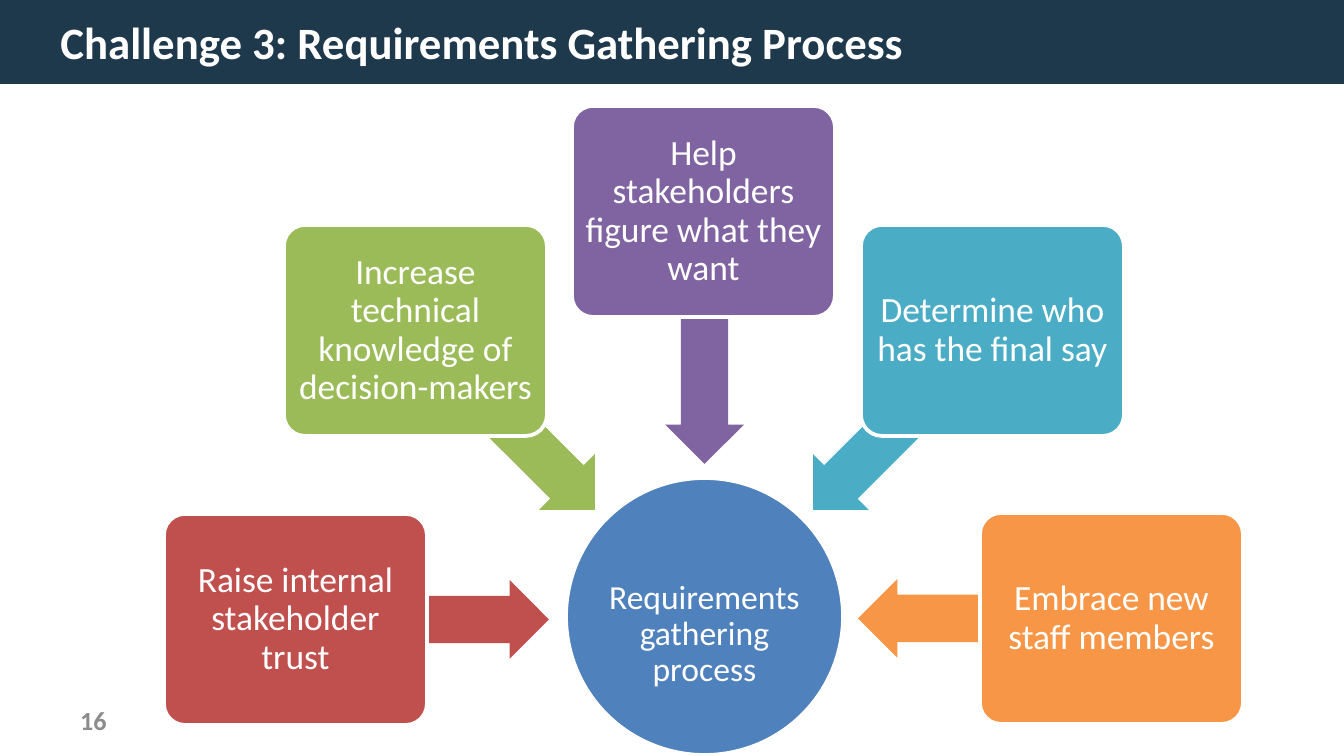
from dataclasses import dataclass
from math import cos, radians, sin

from pptx import Presentation
from pptx.dml.color import RGBColor
from pptx.enum.shapes import MSO_SHAPE as Preset
from pptx.enum.text import MSO_ANCHOR as Anchor, PP_ALIGN as Align
from pptx.util import Emu, Pt

EMU_PER_PX = 914400 / 134.4
SLIDE_WIDTH, SLIDE_HEIGHT = 1344, 756
FONT = "Calibri"
WHITE = "FFFFFF"
HUB_X, HUB_Y = 704, 619
STEP_RADIUS, ARROW_RADIUS = 408, 281
STEP_WIDTH, STEP_HEIGHT = 263, 211
ARROW_LENGTH, ARROW_THICKNESS = 253, 79
CIRCLE_SIZE = 277


@dataclass(frozen=True)
class Step:
    text: str
    fill: str


@dataclass(frozen=True)
class Box:
    left: int
    top: int
    width: int
    height: int


STEPS = [
    Step("Raise internal stakeholder trust", "C0504D"),
    Step("Increase technical knowledge of decision-makers", "9BBB59"),
    Step("Help stakeholders figure what they want", "8064A2"),
    Step("Determine who has the final say", "4BACC6"),
    Step("Embrace new staff members", "F79646"),
]


def px(length: int) -> Emu:
    return Emu(round(length * EMU_PER_PX))


def color(value: str) -> RGBColor:
    return RGBColor.from_string(value)


def corners(box: Box) -> tuple:
    return px(box.left), px(box.top), px(box.width), px(box.height)


def centered(x: float, y: float, width: int, height: int) -> Box:
    return Box(round(x - width / 2), round(y - height / 2), width, height)


def on_ring(angle: int, radius: int, width: int, height: int) -> Box:
    x = HUB_X + radius * cos(radians(angle))
    y = HUB_Y + radius * sin(radians(angle))
    return centered(x, y, width, height)


def add_filled(slide, preset: Preset, box: Box, fill: str, outlined: bool = False):
    shape = slide.shapes.add_shape(preset, *corners(box))
    shape.shadow.inherit = False
    shape.fill.solid()
    shape.fill.fore_color.rgb = color(fill)
    if outlined:
        shape.line.color.rgb = color(WHITE)
        shape.line.width = Pt(2)
    else:
        shape.line.fill.background()
    return shape


def write(shape, text: str, size: int, font_color: str = WHITE,
          bold: bool = False, align: Align = Align.LEFT) -> None:
    frame = shape.text_frame
    frame.word_wrap = True
    frame.vertical_anchor = Anchor.MIDDLE
    paragraph = frame.paragraphs[0]
    paragraph.alignment = align
    run = paragraph.add_run()
    run.text = text
    run.font.name = FONT
    run.font.size = Pt(size)
    run.font.bold = bold
    run.font.color.rgb = color(font_color)


def write_label(shape, text: str, size: int, inset: int, top_inset: int) -> None:
    write(shape, text, size, align=Align.CENTER)
    frame = shape.text_frame
    frame.margin_left = frame.margin_right = frame.margin_bottom = px(inset)
    frame.margin_top = px(top_inset)
    frame.paragraphs[0].line_spacing = 0.9


def add_header(slide) -> None:
    title = slide.shapes.title
    title.left, title.top, title.width, title.height = corners(Box(47, 7, 1230, 70))
    write(title, "Challenge 3: Requirements Gathering Process", 24, bold=True)
    band = add_filled(slide, Preset.RECTANGLE, Box(0, 0, SLIDE_WIDTH, 84), "1E384C")
    title.element.addprevious(band.element)


def add_page_number(slide) -> None:
    number = slide.shapes.add_textbox(*corners(Box(67, 700, 302, 40)))
    write(number, "16", 14, "8C8C8C", bold=True)


def add_hub(slide) -> None:
    box = centered(HUB_X, HUB_Y - 2, CIRCLE_SIZE, CIRCLE_SIZE)
    circle = add_filled(slide, Preset.OVAL, box, "4F81BD", outlined=True)
    write_label(circle, "Requirements gathering process", 18, inset=1, top_inset=37)


def add_step(slide, step: Step, angle: int) -> None:
    arrow_box = on_ring(angle, ARROW_RADIUS, ARROW_LENGTH, ARROW_THICKNESS)
    arrow = add_filled(slide, Preset.LEFT_ARROW, arrow_box, step.fill)
    arrow.adjustments[0] = 0.6
    arrow.adjustments[1] = 0.5
    arrow.rotation = angle % 360

    card_box = on_ring(angle, STEP_RADIUS, STEP_WIDTH, STEP_HEIGHT)
    card = add_filled(slide, Preset.ROUNDED_RECTANGLE, card_box, step.fill, outlined=True)
    card.adjustments[0] = 0.1
    write_label(card, step.text, 19, inset=5, top_inset=5)


def main() -> None:
    presentation = Presentation()
    presentation.slide_width = px(SLIDE_WIDTH)
    presentation.slide_height = px(SLIDE_HEIGHT)
    slide = presentation.slides.add_slide(presentation.slide_layouts[5])
    add_header(slide)
    add_page_number(slide)
    add_hub(slide)
    for index, step in enumerate(STEPS):
        add_step(slide, step, 180 + 45 * index)
    presentation.save("out.pptx")


if __name__ == "__main__":
    main()
